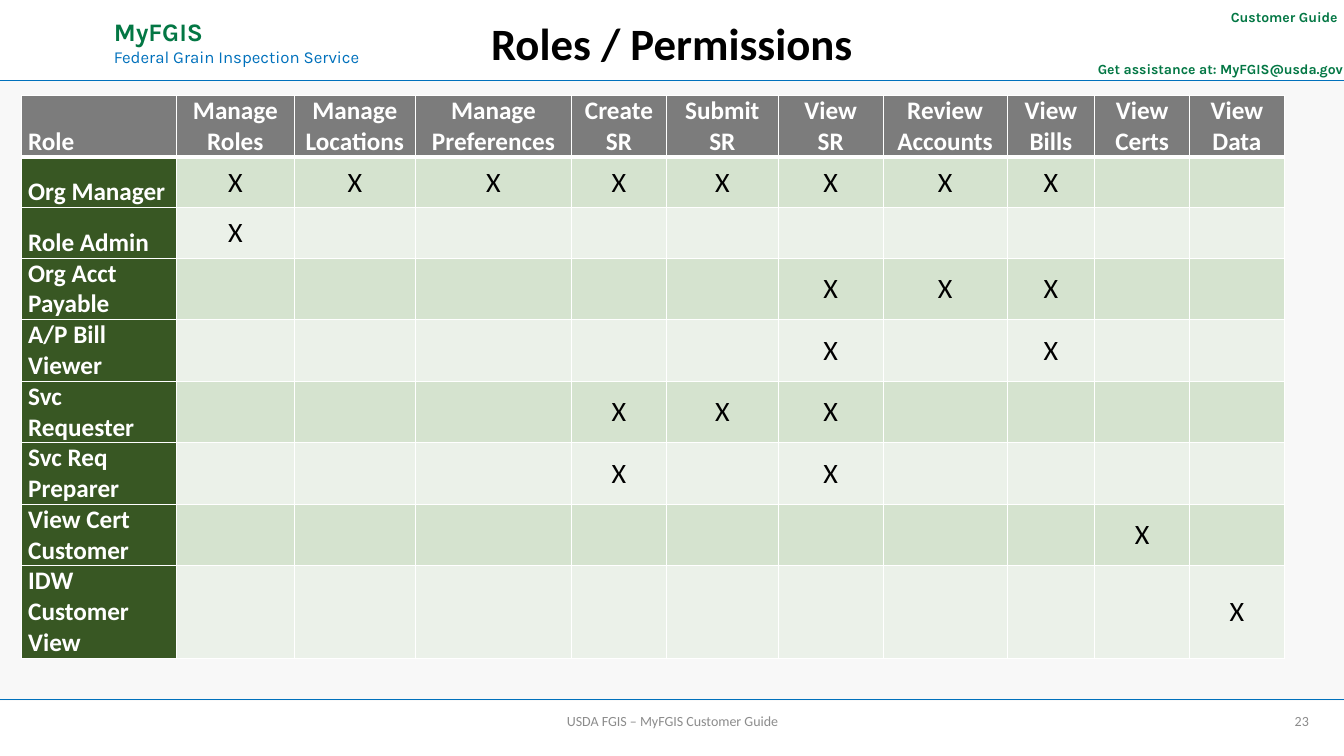
"""Build the roles and permissions slide."""
from lxml import etree
from pptx import Presentation
from pptx import util as u
from pptx.dml.color import RGBColor
from pptx.enum import shapes, text
from pptx.oxml import parse_xml
from pptx.oxml.ns import nsdecls, qn

HUE = {"back": "F8F8F8", "white": "FFFFFF", "black": "000000", "blue": "0071BC",
       "green": "037744", "gray": "8C8C8C", "head": "7C7C7C", "role": "385723",
       "odd": "D5E3CF", "even": "EBF1E9"}
WIDE, HIGH = 13.33, 7.5
LEFT, MID, RIGHT = text.PP_ALIGN.LEFT, text.PP_ALIGN.CENTER, text.PP_ALIGN.RIGHT
TOP, CORE, BASE = text.MSO_ANCHOR.TOP, text.MSO_ANCHOR.MIDDLE, text.MSO_ANCHOR.BOTTOM


def rgb(name):
    return RGBColor.from_string(HUE[name])


def style(para, size, hue, bold=False, face="Calibri", align=LEFT):
    para.alignment = align
    for run in para.runs:
        run.font.size, run.font.bold, run.font.name = u.Pt(size), bold, face
        run.font.color.rgb = rgb(hue)


prs = Presentation()
prs.slide_width, prs.slide_height = u.Inches(WIDE), u.Inches(HIGH)
slide = prs.slides.add_slide(prs.slide_layouts[5])
slide.background.fill.solid()
slide.background.fill.fore_color.rgb = rgb("back")

for top, tall, edge in [(6.95, HIGH - 6.95, 6.94), (0, 0.8, 0.8)]:
    band = slide.shapes.add_shape(shapes.MSO_SHAPE.RECTANGLE, 0, u.Inches(top),
                                  prs.slide_width, u.Inches(tall))
    band.shadow.inherit = False
    band.fill.solid()
    band.fill.fore_color.rgb = rgb("white")
    band.line.fill.background()
    rule = slide.shapes.add_connector(shapes.MSO_CONNECTOR.STRAIGHT, 0, u.Inches(edge),
                                      prs.slide_width, u.Inches(edge))
    rule.line.color.rgb = rgb("blue")
    rule.line.width = u.Pt(0.5)
    etree.SubElement(rule._element.spPr, qn("a:effectLst"))

notes = [
    ((1.03, 0.11, 3.78, 0.81), TOP, LEFT,
     [("MyFGIS", 18, "green", True, "Karla"),
      ("Federal Grain Inspection Service", 12, "blue", False, "Karla")]),
    ((10.79, 0.55, 2.67, 0.47), TOP, LEFT,
     [("Get assistance at: MyFGIS@usda.gov", 10, "green", True, "Karla")]),
    ((12.11, 0.04, 1.94, 0.47), TOP, LEFT,
     [("Customer Guide", 10, "green", True, "Karla")]),
    ((10.08, 6.95, 3, 0.4), CORE, RIGHT, [("23", 10, "gray", False, "Calibri")]),
    ((4.42, 6.95, 4.5, 0.4), CORE, MID,
     [("USDA FGIS – MyFGIS Customer Guide", 10, "gray", False, "Calibri")]),
]
for place, anchor, align, lines in notes:
    frame = slide.shapes.add_textbox(*map(u.Inches, place)).text_frame
    frame.word_wrap = True
    frame.vertical_anchor = anchor
    frame.text = "\n".join(line[0] for line in lines)
    for para, (_, size, hue, bold, face) in zip(frame.paragraphs, lines):
        style(para, size, hue, bold, face, align)

title = slide.shapes.title
title.left, title.top, title.width, title.height = map(u.Inches, (4.77, 0.13, 3.79, 0.66))
title.text_frame.text = "Roles / Permissions"
title.text_frame.vertical_anchor = CORE
title.text_frame.auto_size = text.MSO_AUTO_SIZE.NONE
title.text_frame.paragraphs[0].line_spacing = 0.9
style(title.text_frame.paragraphs[0], 32, "black", True)
slide.shapes._spTree.append(title._element)

heads = ["Role", "Manage Roles", "Manage Locations", "Manage Preferences", "Create SR",
         "Submit SR", "View\vSR", "Review Accounts", "View Bills", "View Certs", "View Data"]
roles = {"Org Manager": "XXXXXXXX..", "Role Admin": "X.........",
         "Org Acct Payable": ".....XXX..", "A/P Bill Viewer": ".....X.X..",
         "Svc Requester": "...XXX....", "Svc Req Preparer": "...X.X....",
         "View Cert Customer": "........X.", "IDW Customer View": ".........X"}
rows = [heads] + [[role, *marks.replace(".", " ")] for role, marks in roles.items()]
cols = [1.54, 1.17, 1.2, 1.55, 0.94, 1.11, 1.04, 1.23, 0.87, 0.94, 0.94]
step = 0.5
grid = slide.shapes.add_table(len(rows), len(cols), u.Inches(0.21), u.Inches(0.95),
                              u.Inches(sum(cols)), u.Inches(step * len(rows))).table
for col, width in zip(grid.columns, cols):
    col.width = u.Inches(width)
for r, row in enumerate(rows):
    grid.rows[r].height = u.Inches(step)
    for c, word in enumerate(row):
        cell = grid.cell(r, c)
        label = r == 0 or c == 0
        for side in "LRTB":
            thick = 3 if (side == "B" and r == 0) or (side == "T" and r == 1) else 1
            cell._tc.get_or_add_tcPr().append(parse_xml(
                f'<a:ln{side} {nsdecls("a")} w="{u.Pt(thick)}"><a:solidFill>'
                f'<a:srgbClr val="{HUE["white"]}"/></a:solidFill></a:ln{side}>'))
        cell.fill.solid()
        cell.fill.fore_color.rgb = rgb(
            "head" if r == 0 else "role" if c == 0 else "odd" if r % 2 else "even")
        cell.margin_left = cell.margin_right = u.Inches(0.07)
        cell.margin_top = cell.margin_bottom = 0
        cell.vertical_anchor = BASE if label else CORE
        cell.text_frame.text = word.strip()
        style(cell.text_frame.paragraphs[0], 18 if label else 20,
              "white" if label else "black", label, align=MID if c else LEFT)

prs.save("out.pptx")
